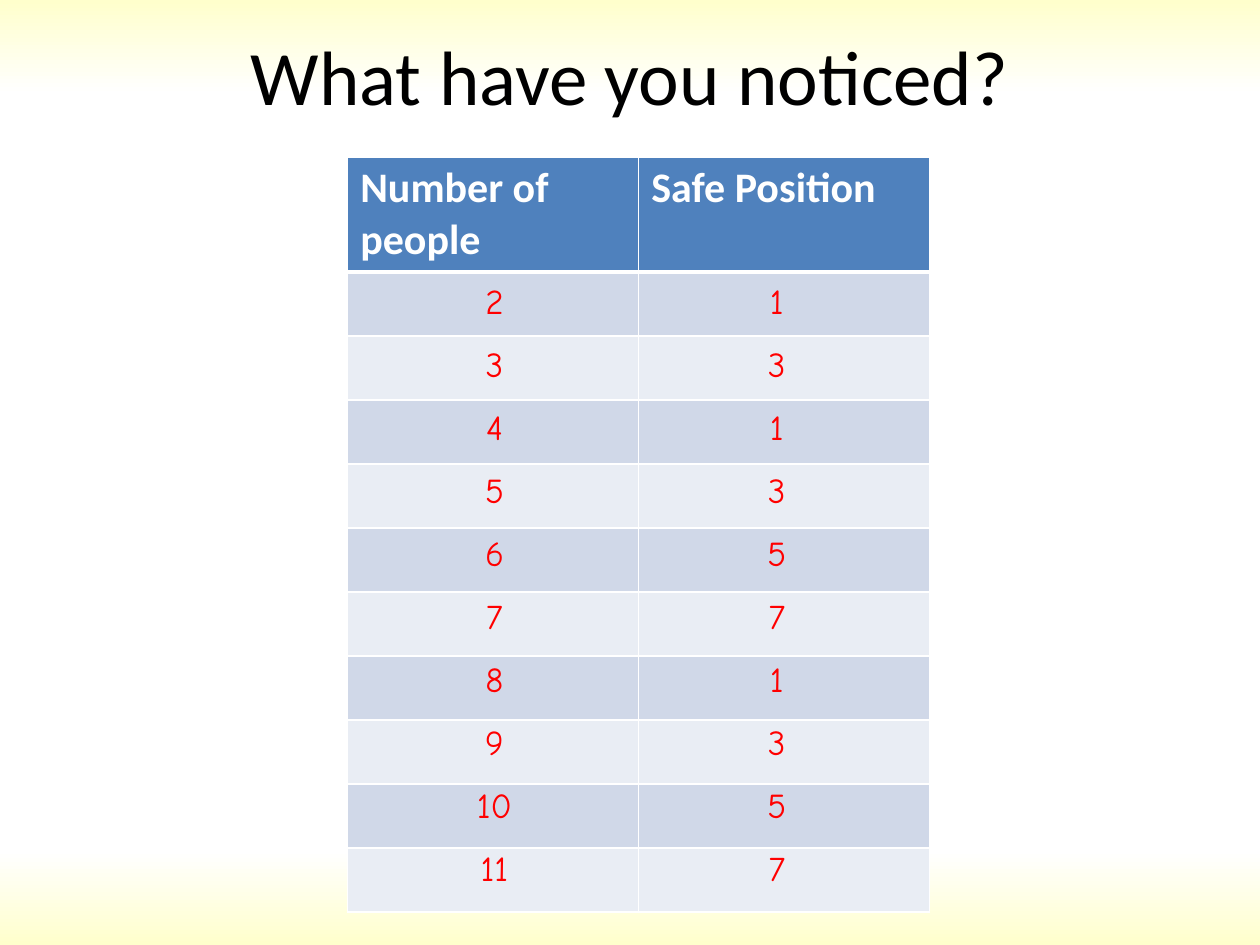
from lxml.etree import SubElement
from pptx import Presentation
from pptx.dml.color import RGBColor
from pptx.enum.text import MSO_ANCHOR, MSO_AUTO_SIZE, PP_ALIGN
from pptx.oxml.ns import qn
from pptx.util import Cm, Pt

CENTER = PP_ALIGN.CENTER
MIDDLE = MSO_ANCHOR.MIDDLE
GROW = MSO_AUTO_SIZE.SHAPE_TO_FIT_TEXT
TITLE_ONLY = 5

HEADERS = ("Number of people", "Safe Position")
SAFE_POSITIONS = {2: 1, 3: 3, 4: 1, 5: 3, 6: 5, 7: 7, 8: 1, 9: 3, 10: 5, 11: 7}
HEADER_FILL = "4F81BD"
BAND_FILLS = ("D0D8E8", "E9EDF4")
BACKGROUND_STOPS = ((0, "FFFFCC"), (10, "FFFFFF"), (90, "FFFFFF"), (100, "FFFFCC"))


def color(value):
    return RGBColor.from_string(value)


def format_text(para, font, size, ink, bold=False, align=None):
    para.alignment = align
    for span in para.runs:
        span.font.name = font
        span.font.size = Pt(size)
        span.font.bold = bold
        span.font.color.rgb = color(ink)


def paint_background(page):
    fill = page.background.fill
    fill.gradient()
    fill.gradient_angle = 270
    stops = page.element.find(".//" + qn("a:gsLst"))
    for stop in list(stops):
        stops.remove(stop)
    for percent, value in BACKGROUND_STOPS:
        stop = SubElement(stops, qn("a:gs"), pos=str(percent * 1000))
        SubElement(stop, qn("a:srgbClr"), val=value)


def place_title(page, left, top, width, height):
    title = page.shapes.title
    title.left, title.top, title.width, title.height = left, top, width, height
    frame = title.text_frame
    frame.text = "What have you noticed?"
    frame.vertical_anchor = MIDDLE
    format_text(frame.paragraphs[0], "Calibri", 44, "000000", align=CENTER)


def style_cell(cell, fill, top=1, bottom=1):
    """Give a cell its fill and white borders, with widths in points."""
    properties = cell._tc.get_or_add_tcPr()
    for side, points in (("L", 1), ("R", 1), ("T", top), ("B", bottom)):
        line = SubElement(properties, qn("a:ln" + side), w=str(Pt(points)))
        solid = SubElement(line, qn("a:solidFill"))
        SubElement(solid, qn("a:srgbClr"), val="FFFFFF")
    cell.fill.solid()
    cell.fill.fore_color.rgb = color(fill)


def place_table(page, left, top, width, header_height, row_height):
    count = len(SAFE_POSITIONS)
    height = header_height + count * row_height
    table = page.shapes.add_table(count + 1, 2, left, top, width, height).table
    for column, text in enumerate(HEADERS):
        table.columns[column].width = width // 2
        cell = table.cell(0, column)
        cell.text = text
        format_text(cell.text_frame.paragraphs[0], "Calibri", 24, "FFFFFF", bold=True)
        style_cell(cell, HEADER_FILL, bottom=3)
    table.rows[0].height = header_height
    for row in range(1, count + 1):
        table.rows[row].height = row_height
        for cell in table.rows[row].cells:
            style_cell(cell, BAND_FILLS[(row - 1) % 2], top=3 if row == 1 else 1)


def place_answers(page, left, top, column_step, row_step):
    """Lay the answers over the table, one box for each number."""
    for row, pair in enumerate(SAFE_POSITIONS.items()):
        for column, number in enumerate(pair):
            box = page.shapes.add_textbox(left + column * column_step,
                                          top + row * row_step, Cm(4.04), Cm(1.12))
            frame = box.text_frame
            frame.word_wrap = True
            frame.auto_size = GROW
            frame.text = str(number)
            format_text(frame.paragraphs[0], "Comic Neue", 20, "FF0000", align=CENTER)


def main():
    deck = Presentation()
    deck.slide_width, deck.slide_height = Cm(25.4), Cm(19.05)
    page = deck.slides.add_slide(deck.slide_layouts[TITLE_ONLY])
    paint_background(page)
    place_title(page, Cm(1.27), Cm(-0.08), Cm(22.86), Cm(3.18))
    place_table(page, Cm(7.01), Cm(3.16), Cm(11.73), Cm(2.29), Cm(1.29))
    place_answers(page, Cm(7.95), Cm(5.51), Cm(5.69), Cm(1.27))
    deck.save("out.pptx")


if __name__ == "__main__":
    main()
